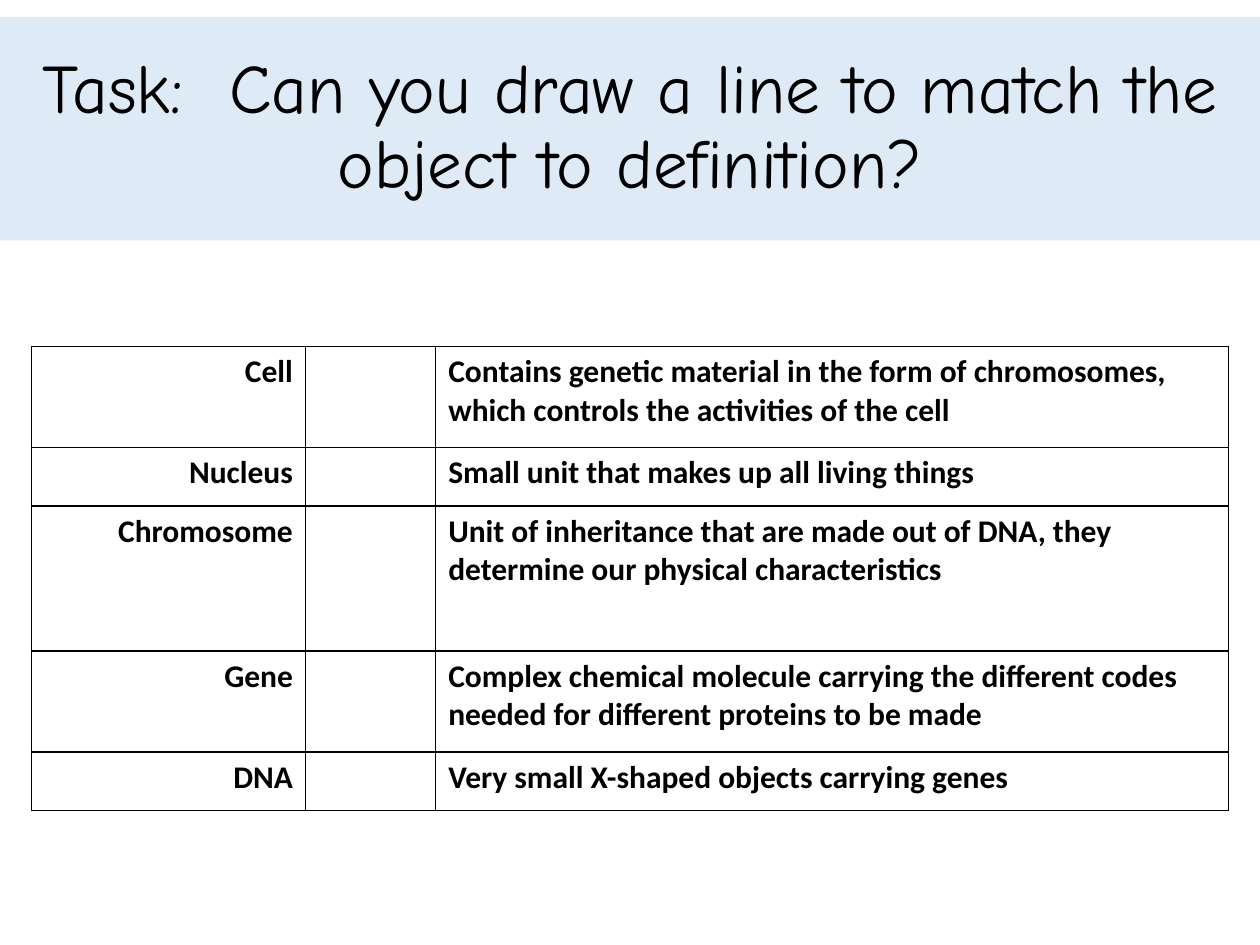
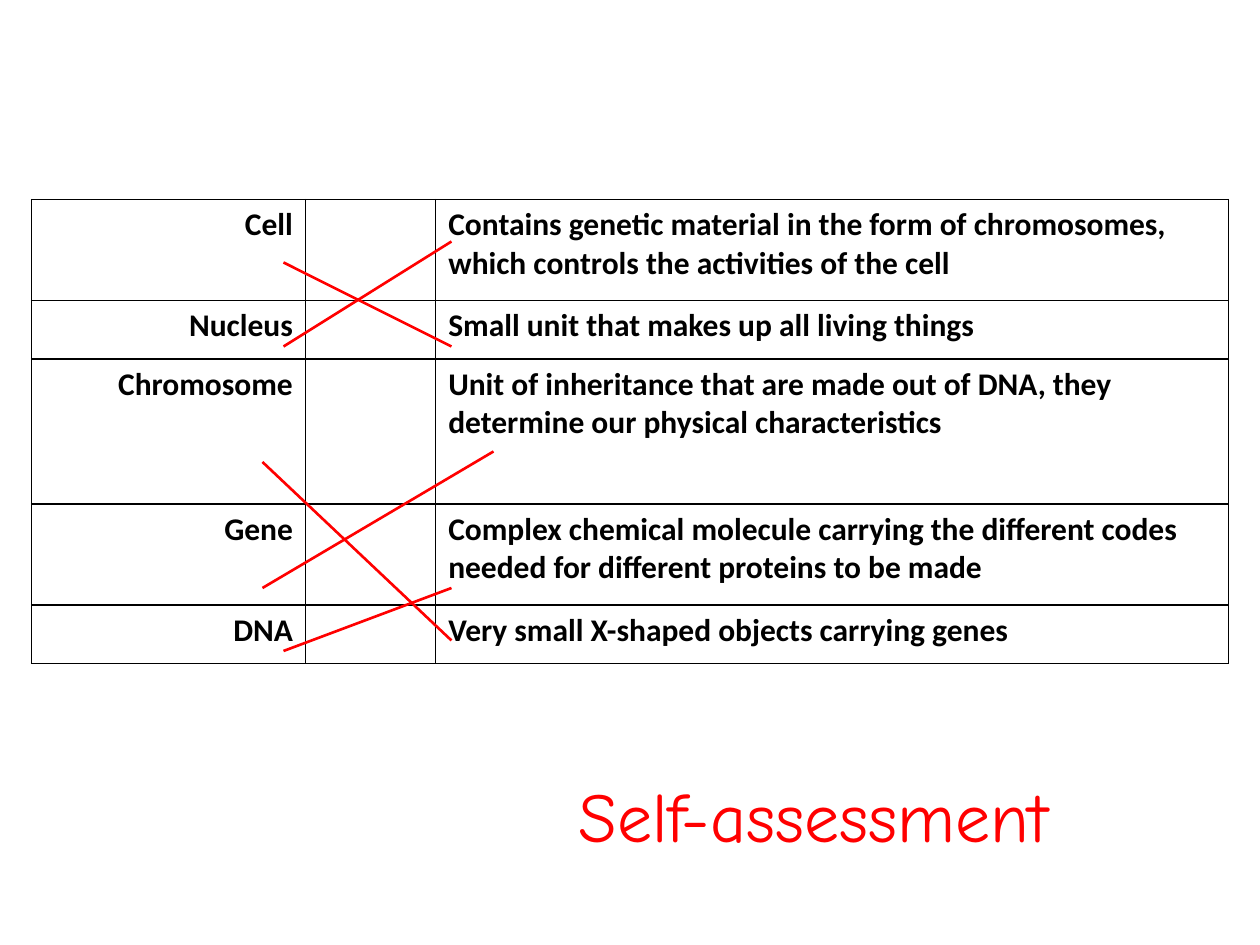
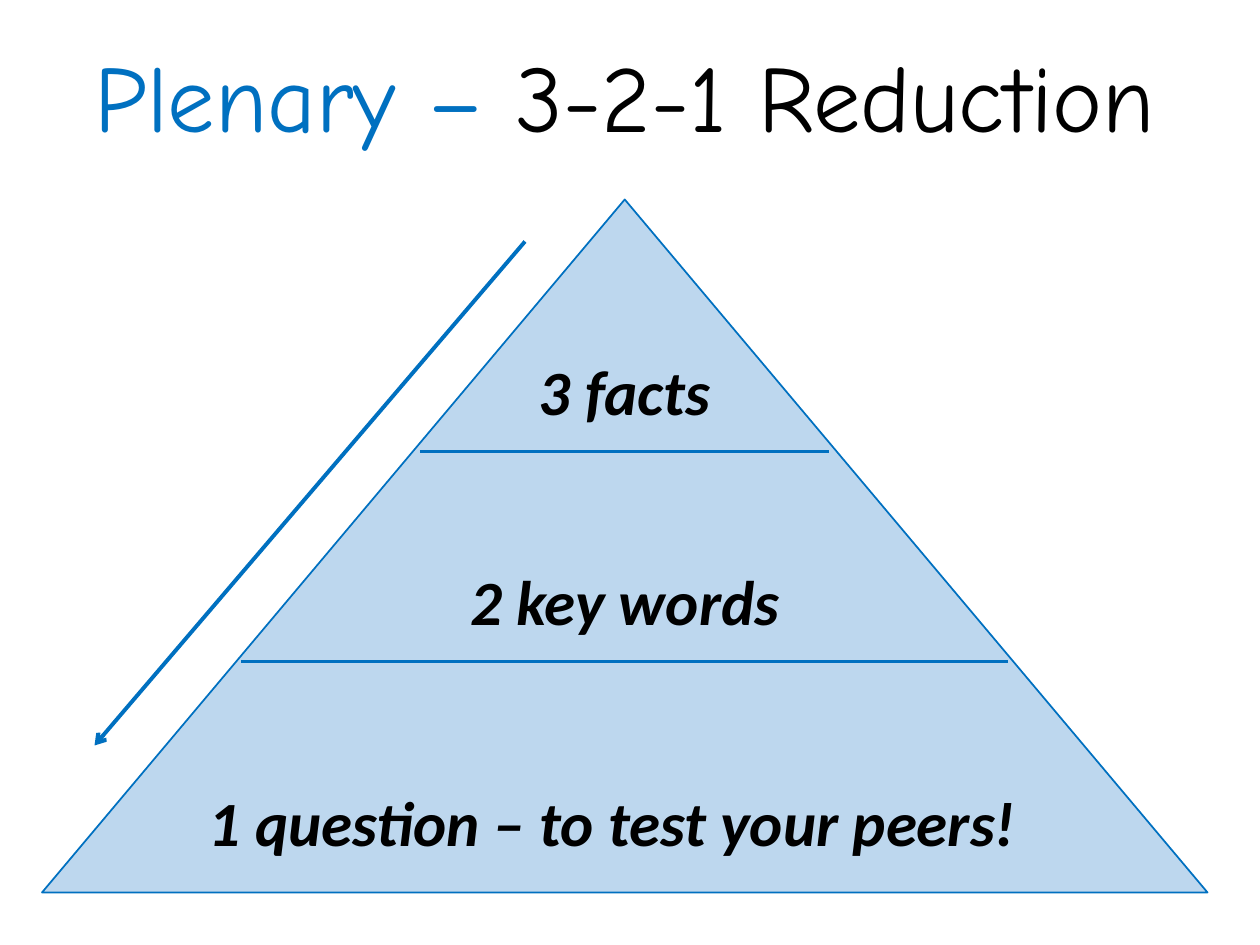
"""Builds three lesson slides: a matching task, its answers and a plenary."""
from dataclasses import dataclass

from lxml.etree import SubElement as Sub
from pptx import Presentation
from pptx.dml.color import RGBColor
from pptx.enum.shapes import MSO_CONNECTOR as Link, MSO_SHAPE as Form
from pptx.enum.text import MSO_ANCHOR as Anchor, MSO_AUTO_SIZE as Fit, PP_ALIGN as Align
from pptx.oxml.ns import qn
from pptx.util import Emu, Inches, Pt

BLACK = RGBColor(0x00, 0x00, 0x00)
RED = RGBColor(0xFF, 0x00, 0x00)
BLUE = RGBColor(0x00, 0x70, 0xC0)
PALE = RGBColor(0xDE, 0xEB, 0xF7)
SKY = RGBColor(0xBD, 0xD7, 0xEE)
WHITE = RGBColor(0xFF, 0xFF, 0xFF)

WIDE, HIGH = Inches(10), Inches(7.5)
COLS, ROWS = 120, 90

TITLE = {"name": "Comic Neue", "size": Pt(39.6), "bold": False}
BIG = TITLE | {"size": Pt(54)}
NOTE = TITLE | {"size": Pt(40)}
STEP = {"name": "Calibri", "size": Pt(36), "bold": True, "italic": True}
CELL = {"name": "Calibri", "size": Pt(18), "bold": True}
FRAME = {"margin_left": Inches(0.1), "margin_right": Inches(0.1),
         "margin_top": Inches(0.05), "margin_bottom": Inches(0.05)}

SPANS = (26.1, 12.4, 75.5)
TERMS = (
    (9.6, "Cell", "Contains genetic material in the form of chromosomes, "
                  "which controls the activities of the cell"),
    (5.6, "Nucleus", "Small unit that makes up all living things"),
    (13.8, "Chromosome", "Unit of inheritance that are made out of DNA, "
                         "they determine our physical characteristics"),
    (9.6, "Gene", "Complex chemical molecule carrying the different codes "
                  "needed for different proteins to be made"),
    (5.6, "DNA", "Very small X-shaped objects carrying genes"),
)


@dataclass(frozen=True)
class Box:
    """An area in grid columns and rows."""
    col: float
    row: float
    wide: float
    high: float

    def place(self) -> tuple:
        """Return left, top, width and height."""
        return across(self.col), down(self.row), across(self.wide), down(self.high)


@dataclass(frozen=True)
class Line:
    """A straight line between two grid points."""
    start: tuple
    end: tuple
    color: RGBColor
    width: float = 1.5
    arrow: bool = False


@dataclass(frozen=True)
class Label:
    """A centred text in one area."""
    box: Box
    text: str
    style: dict
    color: RGBColor = BLACK


MATCHES = tuple(Line(start, end, RED) for start, end in (
    ((27, 25), (43, 33)),
    ((27, 33), (43, 23)),
    ((25, 44), (43, 61)),
    ((25, 56), (47, 43)),
    ((27, 62), (43, 56)),
))
LEVELS = (Line((40, 43), (79, 43), BLUE), Line((23, 63), (96, 63), BLUE))
STEPS = (
    Label(Box(48, 33, 23, 8.5), "3 facts", STEP),
    Label(Box(43, 53, 33, 8.5), "2 key words", STEP),
    Label(Box(13, 74, 92, 8.5), "1 question – to test your peers! ", STEP),
)
ARROW = Line((50, 23), (9, 71), BLUE, 2.25, True)


def across(cols: float) -> Emu:
    """Turn grid columns into a length."""
    return Emu(round(WIDE * cols / COLS))


def down(rows: float) -> Emu:
    """Turn grid rows into a length."""
    return Emu(round(HIGH * rows / ROWS))


def apply(item, values: dict) -> None:
    """Set each named value on an item."""
    for name, value in values.items():
        setattr(item, name, value)


def write(frame, runs: tuple, style: dict, align: Align = Align.CENTER):
    """Write coloured runs into the first paragraph and return it."""
    para = frame.paragraphs[0]
    para.alignment = align
    for text, color in runs:
        run = para.add_run()
        run.text = text
        apply(run.font, style)
        run.font.color.rgb = color
    return para


def add_title(deck, box: Box, runs: tuple, style: dict, spacing: float):
    """Add a slide with a title and return both."""
    slide = deck.slides.add_slide(deck.slide_layouts[5])
    title = slide.shapes.title
    apply(title, dict(zip(("left", "top", "width", "height"), box.place())))
    frame = title.text_frame
    apply(frame, FRAME | {"word_wrap": True, "auto_size": Fit.NONE,
                          "vertical_anchor": Anchor.MIDDLE})
    write(frame, runs, style).line_spacing = spacing
    return slide, title


def add_label(slide, label: Label) -> None:
    """Add a text box."""
    frame = slide.shapes.add_textbox(*label.box.place()).text_frame
    apply(frame, FRAME | {"word_wrap": True})
    write(frame, ((label.text, label.color),), label.style)


def add_line(slide, line: Line) -> None:
    """Add a line, with an arrowhead if asked for."""
    (left, top), (right, foot) = line.start, line.end
    link = slide.shapes.add_connector(
        Link.STRAIGHT, across(left), down(top), across(right), down(foot))
    link.line.color.rgb = line.color
    link.line.width = Pt(line.width)
    props = link._element.spPr
    if line.arrow:
        Sub(props.find(qn("a:ln")), qn("a:tailEnd"), type="arrow")
    Sub(props, qn("a:effectLst"))


def add_edges(cell) -> None:
    """Fill a cell white and draw its four borders."""
    props = cell._tc.get_or_add_tcPr()
    for side in ("lnL", "lnR", "lnT", "lnB"):
        edge = Sub(props, qn(f"a:{side}"), w=str(Pt(1)))
        fill = Sub(edge, qn("a:solidFill"))
        Sub(fill, qn("a:srgbClr"), val=str(BLACK))
    cell.fill.solid()
    cell.fill.fore_color.rgb = WHITE


def add_terms(slide, row: float) -> None:
    """Add the table of terms and definitions from a grid row down."""
    box = Box(3, row, sum(SPANS), sum(term[0] for term in TERMS))
    table = slide.shapes.add_table(len(TERMS), len(SPANS), *box.place()).table
    apply(table, {"first_row": False, "horz_banding": False})
    for col, span in zip(table.columns, SPANS):
        col.width = across(span)
    for line, (high, term, text) in zip(table.rows, TERMS):
        line.height = down(high)
        for cell in line.cells:
            apply(cell, FRAME)
            add_edges(cell)
        write(line.cells[0].text_frame, ((term, BLACK),), CELL, Align.RIGHT)
        write(line.cells[2].text_frame, ((text, BLACK),), CELL, Align.LEFT)


def add_task(deck) -> None:
    """Add the matching task."""
    text = "Task:  Can you draw a line to match the object to definition?"
    slide, title = add_title(deck, Box(0, 1.6, COLS, 21.3), ((text, BLACK),), TITLE, 0.9)
    title.fill.solid()
    title.fill.fore_color.rgb = PALE
    add_terms(slide, 33)


def add_answers(deck) -> None:
    """Add the matched answers."""
    slide = deck.slides.add_slide(deck.slide_layouts[6])
    add_terms(slide, 19)
    add_label(slide, Label(Box(50, 73, 55, 9.2), "Self-assessment", NOTE, RED))
    for line in MATCHES:
        add_line(slide, line)


def add_plenary(deck) -> None:
    """Add the pyramid of closing steps."""
    runs = (("Plenary – ", BLUE), ("3-2-1 Reduction", BLACK))
    slide, _ = add_title(deck, Box(3, 3, 113, 12.1), runs, BIG, 1.0)
    cone = slide.shapes.add_shape(Form.ISOSCELES_TRIANGLE, *Box(4, 19, 111, 66).place())
    cone.shadow.inherit = False
    cone.fill.solid()
    cone.fill.fore_color.rgb = SKY
    cone.line.color.rgb = BLUE
    cone.line.width = Pt(1)
    for line in LEVELS:
        add_line(slide, line)
    for step in STEPS:
        add_label(slide, step)
    add_line(slide, ARROW)


def main() -> None:
    """Build and save the deck."""
    deck = Presentation()
    apply(deck, {"slide_width": WIDE, "slide_height": HIGH})
    for build in (add_task, add_answers, add_plenary):
        build(deck)
    deck.save("out.pptx")


if __name__ == "__main__":
    main()
